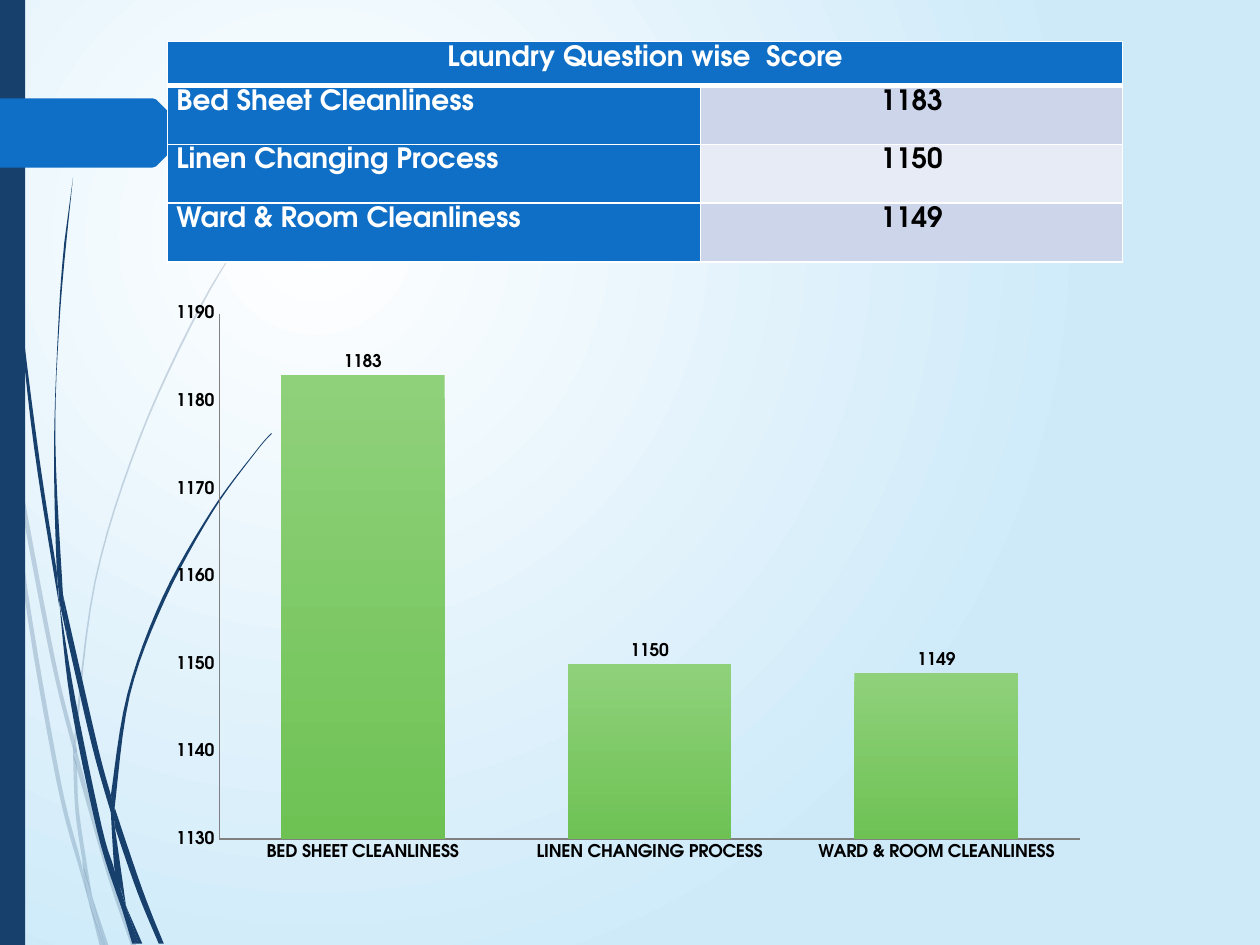
import lxml.etree
import pptx
import pptx.chart.data
import pptx.dml.color
import pptx.enum.chart
import pptx.enum.shapes
import pptx.enum.text
import pptx.oxml
import pptx.oxml.ns
import pptx.util

Inches = pptx.util.Inches
Pt = pptx.util.Pt
RGBColor = pptx.dml.color.RGBColor
qn = pptx.oxml.ns.qn
Align = pptx.enum.text.PP_ALIGN

NAVY = RGBColor(0x17, 0x40, 0x6D)
BLUE = RGBColor(0x0F, 0x6F, 0xC6)
SKY = RGBColor(0xCE, 0xEA, 0xF9)
WHITE = RGBColor(0xFF, 0xFF, 0xFF)
BLACK = RGBColor(0, 0, 0)
GRAY = RGBColor(0x80, 0x80, 0x80)
BANDS = [RGBColor(0xCC, 0xD5, 0xEA), RGBColor(0xE7, 0xEB, 0xF5)]
LIGHT_GREEN = RGBColor(0x8F, 0xD1, 0x7B)
GREEN = RGBColor(0x6E, 0xC2, 0x54)
FONT = "TeX Gyre Adventor"

TITLE = "Laundry Question wise  Score"
SCORES = [("Bed Sheet Cleanliness", 1183), ("Linen Changing Process", 1150),
          ("Ward & Room Cleanliness", 1149)]

FAINT_STRANDS = [
    ([(.1, 3.45), (.43, 5.2), (.59, 5.86)], [(.59, 5.99), (.4, 5.22), (.12, 3.76)]),
    ([(.61, 5.96), (.64, 6.07), (.88, 6.92), (1.08, 7.5)], [(1.04, 7.5), (.85, 6.94), (.61, 6.1)]),
    ([(.73, 7.11), (.86, 7.5)], [(.83, 7.5)]),
    ([(.08, 3.5), (.22, 4.69), (.48, 6.19), (.64, 6.83), (.7, 7.14)],
     [(.64, 6.93), (.45, 6.21), (.19, 4.7), (.08, 3.5)]),
    ([(.58, 5.99), (.61, 6.1), (.63, 6.46), (.73, 7.11)], [(.67, 6.92), (.6, 6.46), (.58, 5.99)]),
    ([(.61, 5.96), (.61, 5.84), (.76, 4.62), (1.11, 3.49), (1.59, 2.45), (2.01, 1.75), (2.17, 1.54)],
     [(2.17, 1.53), (2.01, 1.75), (1.58, 2.44), (1.1, 3.48), (.75, 4.61), (.59, 5.84)]),
    ([(.7, 7.14), (.82, 7.5)], [(.79, 7.5)]),
    ([(.59, 5.86), (.61, 5.96), (.61, 6.1)], [(.58, 5.99)]),
    ([(.65, 6.83), (.73, 7.11), (.83, 7.5)], [(.82, 7.5), (.7, 7.14), (.65, 6.83)]),
]
DARK_STRANDS = [
    ([(.02, 0), (.05, 1.1), (.14, 2.33), (.27, 3.55), (.47, 4.81)],
     [(.45, 4.53), (.3, 3.55), (.15, 2.32), (.06, 1.09), (.03, 0)]),
    ([(.5, 4.72), (.77, 5.9), (.88, 6.31)], [(.88, 6.45), (.73, 5.92), (.53, 5.05)]),
    ([(.91, 6.41), (1.13, 7.06), (1.3, 7.49)], [(1.26, 7.49), (1.09, 7.08), (.91, 6.56)]),
    ([(.47, 4.77), (.6, 5.56), (.81, 6.57), (.91, 6.91), (.97, 7.22)],
     [(.92, 7.08), (.77, 6.59), (.56, 5.57), (.47, 4.77)]),
    ([(.5, 4.72), (.44, 3.49), (.48, 2.45), (.58, 1.41)],
     [(.51, 1.93), (.47, 2.45), (.43, 3.49), (.45, 4.49), (.49, 4.72)]),
    ([(1, 7.19), (1.13, 7.49)], [(1.1, 7.49)]),
    ([(.45, 4.49), (.5, 4.72), (.53, 5.05)], [(.47, 4.77)]),
    ([(.91, 6.41), (1.03, 5.52), (1.31, 4.76), (1.69, 4.06), (2.03, 3.59), (2.16, 3.44)],
     [(2.15, 3.44), (2.03, 3.58), (1.68, 4.05), (1.29, 4.74), (1.01, 5.51), (.88, 6.31)]),
    ([(.97, 7.22), (1.08, 7.49)], [(1.05, 7.49)]),
    ([(.88, 6.45), (.91, 6.56), (1, 7.19)], [(.96, 7.06), (.91, 6.91), (.88, 6.45)]),
    ([(.88, 6.31), (.91, 6.41), (.91, 6.56)], [(.88, 6.45)]),
    ([(.91, 6.91), (1, 7.19), (1.1, 7.49)], [(1.08, 7.49), (.97, 7.22), (.91, 6.91)]),
]


def smooth_edge(points, steps=6):
    """Return points along a Catmull-Rom curve through the given points."""
    ends = [points[0], *points, points[-1]]
    curve = [points[0]]
    for a, b, c, d in zip(ends, ends[1:], ends[2:], ends[3:]):
        for step in range(1, steps + 1):
            t = step / steps
            curve.append(tuple(
                q + t * (r - p) / 2 + t * t * (2 * p - 5 * q + 4 * r - s) / 2
                + t ** 3 * (3 * q - p - 3 * r + s) / 2
                for p, q, r, s in zip(a, b, c, d)))
    return curve


def paint(shape, color, alpha=None):
    """Give a shape a plain fill without line or shadow."""
    shape.shadow.inherit = False
    shape.fill.solid()
    shape.fill.fore_color.rgb = color
    shape.line.fill.background()
    if alpha is not None:
        tint = shape.element.spPr.find(".//" + qn("a:srgbClr"))
        lxml.etree.SubElement(tint, qn("a:alpha"), val=str(alpha * 1000))


def add_outline(shapes, points, left, top, color, alpha=None):
    """Add a closed outline whose points are inches from left and top."""
    corners = [(Inches(x), Inches(y)) for x, y in points]
    builder = shapes.build_freeform(*corners[0])
    builder.add_line_segments(corners[1:], close=True)
    paint(builder.convert_to_shape(left, top), color, alpha)


def add_strands(page, strands, left, top, alpha=None):
    """Add one group of curved grass strands."""
    group = page.shapes.add_group_shape()
    for outward, back in strands:
        points = smooth_edge(outward) + smooth_edge(back)
        add_outline(group.shapes, points, left, top, NAVY, alpha)


def add_side_band(page, left, top, width, height):
    """Add the dark side band and the pointed tag across it."""
    band = page.shapes.add_shape(pptx.enum.shapes.MSO_SHAPE.RECTANGLE, left, top, width, height)
    paint(band, NAVY)
    tag = [(0, 0), (1.21, 0), (1.24, .01), (1.49, .26), (1.5, .28),
           (1.49, .29), (1.24, .54), (1.21, .55), (0, .55)]
    add_outline(page.shapes, tag, left, top + Inches(0.78), BLUE)


def fill_background(page):
    """Fill the page with a round gradient from white to sky blue."""
    fill = page.background.fill
    fill.gradient()
    for stop, color in zip(fill.gradient_stops, (WHITE, SKY)):
        stop.color.rgb = color
    gradient = page.element.find(".//" + qn("a:gradFill"))
    gradient.remove(gradient.find(qn("a:lin")))
    circle = lxml.etree.SubElement(gradient, qn("a:path"), path="circle")
    lxml.etree.SubElement(circle, qn("a:fillToRect"), l="50000", t="50000", r="100000", b="100000")


def style_font(font, size, color):
    """Set the bold deck font in a size and colour."""
    font.name, font.size, font.bold = FONT, Pt(size), True
    font.color.rgb = color


def write_text(frame, text, size=16, color=WHITE, align=Align.CENTER):
    """Write one formatted paragraph."""
    para = frame.paragraphs[0]
    para.alignment = align
    para.line_spacing = 1.15
    span = para.add_run()
    span.text = text
    style_font(span.font, size, color)


def style_cell(cell, fill, top=1, bottom=1):
    """Set a cell's margins, white borders and fill."""
    cell.margin_left = cell.margin_right = Inches(0.07)
    cell.margin_top = cell.margin_bottom = 0
    props = cell._tc.get_or_add_tcPr()
    for side, points in (("L", 1), ("R", 1), ("T", top), ("B", bottom)):
        border = lxml.etree.SubElement(props, qn("a:ln" + side), w=str(Pt(points)))
        solid = lxml.etree.SubElement(border, qn("a:solidFill"))
        lxml.etree.SubElement(solid, qn("a:srgbClr"), val=str(WHITE))
    cell.fill.solid()
    cell.fill.fore_color.rgb = fill


def add_score_table(page, left, top, width, height):
    """Add the table of scores under a merged heading."""
    table = page.shapes.add_table(len(SCORES) + 1, 2, left, top, width, height).table
    table.columns[0].width = Inches(4.23)
    table.columns[1].width = width - Inches(4.23)
    heading = Inches(0.35)
    for index, row in enumerate(table.rows):
        row.height = (height - heading) // len(SCORES) if index else heading
    for column in range(2):
        style_cell(table.cell(0, column), BLUE, bottom=3)
    table.cell(0, 0).merge(table.cell(0, 1))
    write_text(table.cell(0, 0).text_frame, TITLE)
    for index, (question, score) in enumerate(SCORES):
        label, value = table.cell(index + 1, 0), table.cell(index + 1, 1)
        for cell, fill in ((label, BLUE), (value, BANDS[index % 2])):
            style_cell(cell, fill, top=1 if index else 3)
        write_text(label.text_frame, question, align=Align.JUSTIFY)
        write_text(value.text_frame, str(score), color=BLACK)


def add_score_chart(page, left, top, width, height):
    """Add the column chart of scores."""
    data = pptx.chart.data.CategoryChartData()
    data.categories = [question.upper() for question, score in SCORES]
    data.add_series("Series 1", [score for question, score in SCORES])
    kind = pptx.enum.chart.XL_CHART_TYPE.COLUMN_CLUSTERED
    chart = page.shapes.add_chart(kind, left, top, width, height, data).chart
    chart.has_legend = chart.has_title = False
    style_font(chart.font, 10, BLACK)
    for axis in (chart.category_axis, chart.value_axis):
        axis.has_major_gridlines = False
        axis.major_tick_mark = axis.minor_tick_mark = pptx.enum.chart.XL_TICK_MARK.NONE
        axis.format.line.color.rgb = GRAY
        axis.format.line.width = Pt(0.75)
        style_font(axis.tick_labels.font, 10, BLACK)
    scale = chart.value_axis
    scale.minimum_scale, scale.maximum_scale, scale.major_unit = 1130, 1190, 10
    plot = chart.plots[0]
    plot.gap_width = 75
    plot.vary_by_categories = False
    plot.has_data_labels = True
    plot.data_labels.show_value = True
    plot.data_labels.position = pptx.enum.chart.XL_LABEL_POSITION.OUTSIDE_END
    style_font(plot.data_labels.font, 10, BLACK)
    fill = plot.series[0].format.fill
    fill.gradient()
    fill.gradient_angle = 270
    for stop, color in zip(fill.gradient_stops, (LIGHT_GREEN, GREEN)):
        stop.color.rgb = color
    area = chart.element.find(".//" + qn("c:plotArea"))
    for old in area.findall(qn("c:layout")):
        area.remove(old)
    layout = lxml.etree.Element(qn("c:layout"))
    area.insert(0, layout)
    manual = lxml.etree.SubElement(layout, qn("c:manualLayout"))
    for name, value in (("layoutTarget", "inner"), ("xMode", "edge"), ("yMode", "edge"),
                        ("x", Inches(0.49) / width), ("y", Inches(0.16) / height),
                        ("w", Inches(6.83) / width), ("h", Inches(4.17) / height)):
        lxml.etree.SubElement(manual, qn("c:" + name), val=str(value))


def main():
    """Build and save the deck."""
    deck = pptx.Presentation()
    deck.slide_width, deck.slide_height = Inches(10), Inches(7.5)
    page = deck.slides.add_slide(deck.slide_layouts[6])
    fill_background(page)
    add_strands(page, FAINT_STRANDS, 0, 0, alpha=20)
    add_strands(page, DARK_STRANDS, 0, 0)
    add_side_band(page, 0, 0, Inches(0.2), deck.slide_height)
    add_score_table(page, Inches(1.33), Inches(0.33), Inches(7.58), Inches(1.75))
    add_score_chart(page, Inches(1.25), Inches(2.33), Inches(7.46), Inches(4.58))
    deck.save("out.pptx")


if __name__ == "__main__":
    main()
